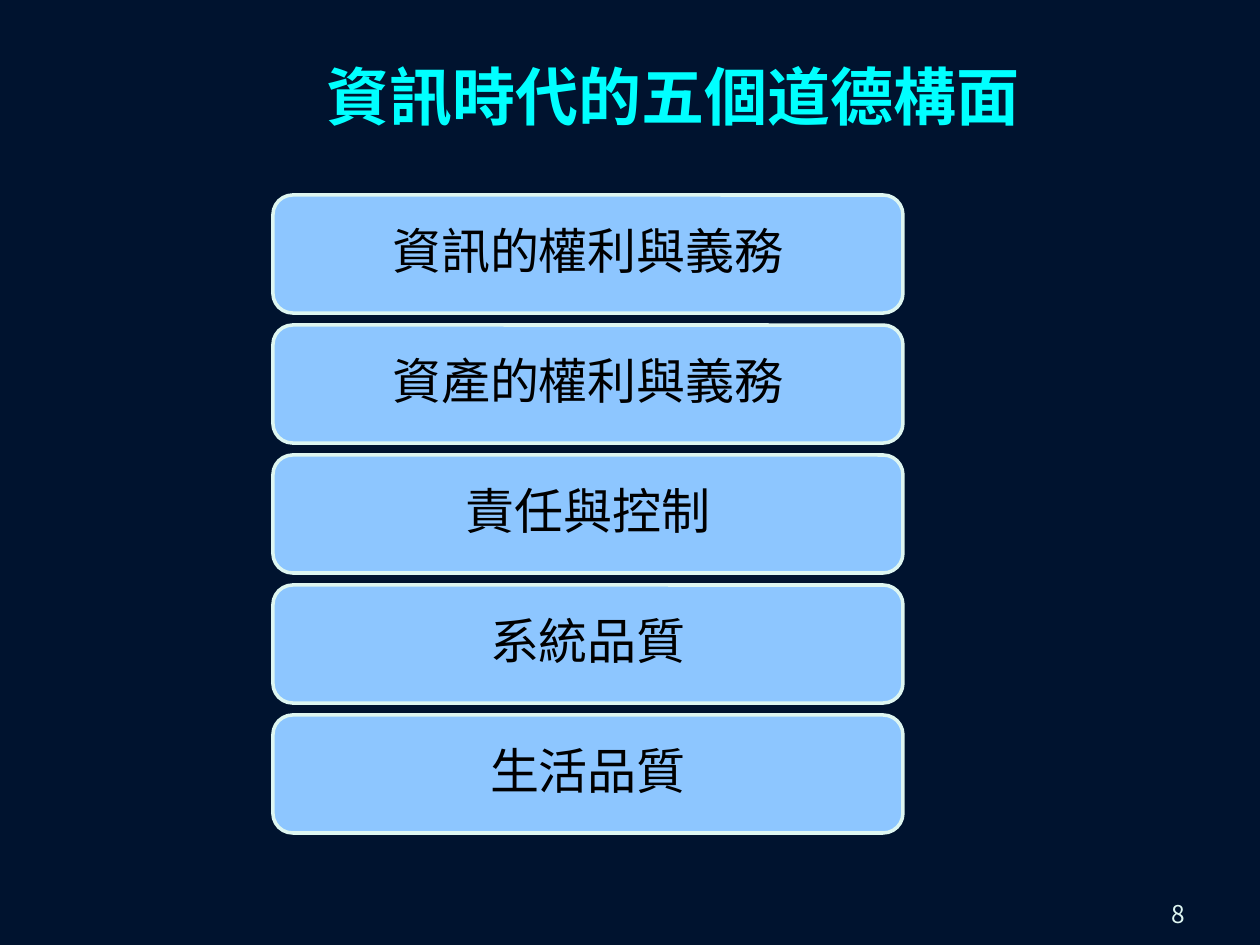
from dataclasses import dataclass

import pptx
import pptx.dml.color
import pptx.enum.shapes
import pptx.enum.text
import pptx.oxml.ns
import pptx.util
from lxml import etree

EMU_PER_PX = 914400 / 126
COLORS = {
    "background": "00132F",
    "card": "8DC6FF",
    "pale": "DEF6F1",
    "title": "00FFFF",
    "label": "000000",
}
CJK_FONT = "Noto Sans CJK KR"
ALIGN = pptx.enum.text.PP_ALIGN
ANCHOR = pptx.enum.text.MSO_ANCHOR

DIMENSIONS = ["資訊的權利與義務", "資產的權利與義務", "責任與控制", "系統品質", "生活品質"]
CARD_LEFT, CARD_TOP, CARD_WIDTH, CARD_HEIGHT = 273, 195, 630, 118
CARD_PITCH = 130


@dataclass
class Box:
    left: int
    top: int
    width: int
    height: int

    def emu(self) -> list[int]:
        return [px(n) for n in (self.left, self.top, self.width, self.height)]


@dataclass
class TextStyle:
    size: int
    color: str
    font: str = CJK_FONT
    bold: bool = False
    align: ALIGN = ALIGN.CENTER
    anchor: ANCHOR = ANCHOR.MIDDLE


def px(length: int) -> int:
    return round(length * EMU_PER_PX)


def rgb(name: str) -> pptx.dml.color.RGBColor:
    return pptx.dml.color.RGBColor.from_string(COLORS[name])


def write_text(shape, text: str, style: TextStyle):
    text_frame = shape.text_frame
    text_frame.word_wrap = True
    text_frame.vertical_anchor = style.anchor
    paragraph = text_frame.paragraphs[0]
    paragraph.text = text
    paragraph.alignment = style.align
    font = paragraph.runs[0].font
    font.size = pptx.util.Pt(style.size)
    font.bold = style.bold
    font.color.rgb = rgb(style.color)
    font.name = style.font
    east_asian = etree.SubElement(paragraph.runs[0].font._element, pptx.oxml.ns.qn("a:ea"))
    east_asian.set("typeface", style.font)
    return paragraph


def add_text(slide, box: Box, text: str, style: TextStyle) -> None:
    write_text(slide.shapes.add_textbox(*box.emu()), text, style)


def add_card(slide, box: Box, text: str) -> None:
    card = slide.shapes.add_shape(
        pptx.enum.shapes.MSO_SHAPE.ROUNDED_RECTANGLE, *box.emu()
    )
    card.shadow.inherit = False
    card.fill.solid()
    card.fill.fore_color.rgb = rgb("card")
    card.line.color.rgb = rgb("pale")
    card.line.width = pptx.util.Pt(2)
    paragraph = write_text(card, text, TextStyle(28, "label"))
    paragraph.line_spacing = 0.9
    paragraph.space_after = pptx.util.Pt(10)


def main() -> None:
    presentation = pptx.Presentation()
    presentation.slide_width = px(1260)
    presentation.slide_height = px(945)
    slide = presentation.slides.add_slide(presentation.slide_layouts[6])
    slide.background.fill.solid()
    slide.background.fill.fore_color.rgb = rgb("background")

    for index, dimension in enumerate(DIMENSIONS):
        top = CARD_TOP + index * CARD_PITCH
        add_card(slide, Box(CARD_LEFT, top, CARD_WIDTH, CARD_HEIGHT), dimension)

    add_text(slide, Box(903, 893, 294, 66), "8",
             TextStyle(14, "pale", align=ALIGN.RIGHT, anchor=ANCHOR.TOP))
    add_text(slide, Box(115, 16, 1116, 159), "資訊時代的五個道德構面",
             TextStyle(36, "title", font="Arial", bold=True))

    presentation.save("out.pptx")


if __name__ == "__main__":
    main()
